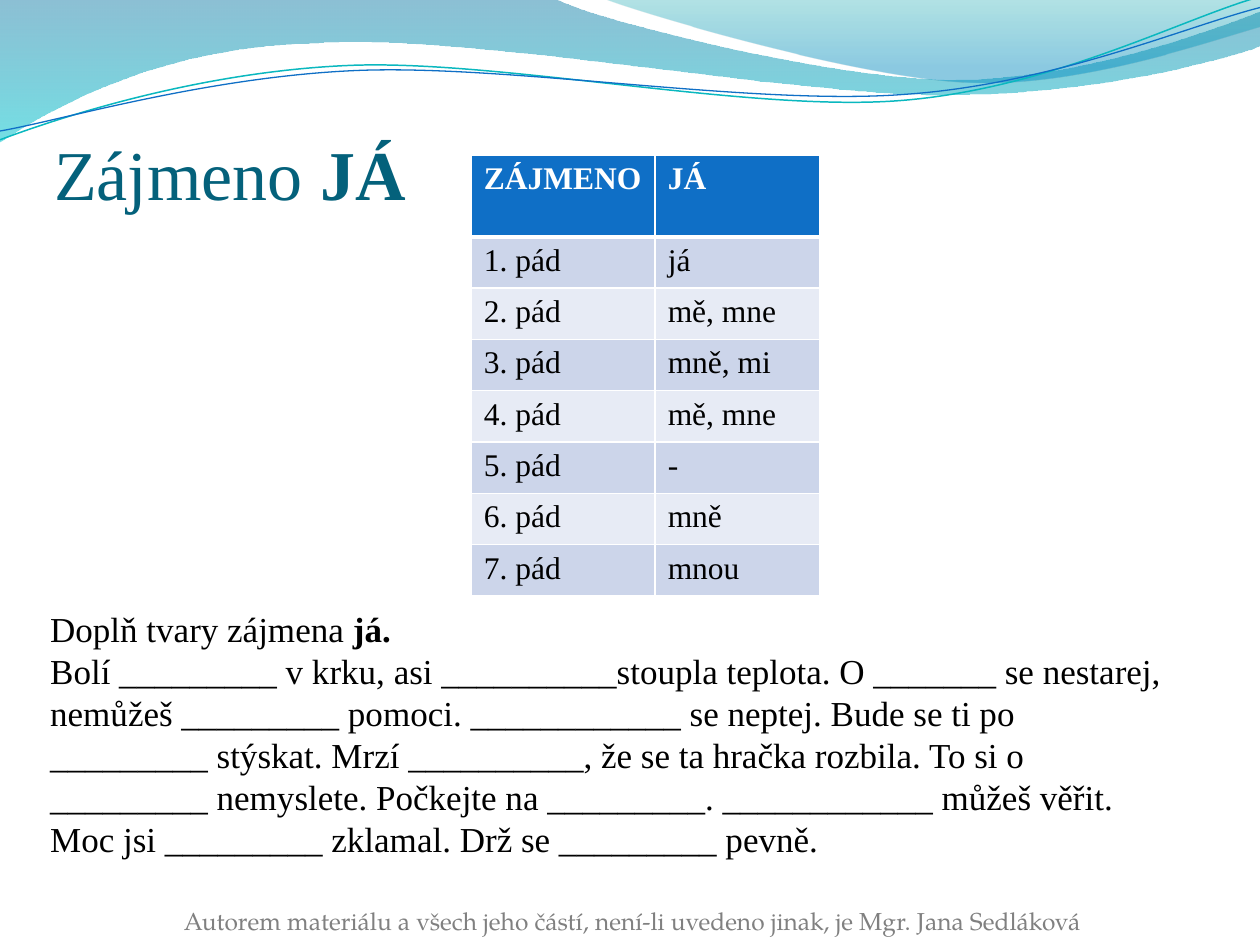
import pptx
import pptx.util
import pptx.dml.color
import pptx.enum.text
from pptx.oxml.ns import qn
from lxml import etree

Inches = pptx.util.Inches
Pt = pptx.util.Pt
ANCHOR = pptx.enum.text.MSO_ANCHOR

COLORS = {
    "title": "04617B", "text": "000000", "footer": "808080",
    "header": "0F6FC6", "header_text": "FFFFFF", "border": "FFFFFF",
    "odd_row": "CCD5EA", "even_row": "E7EBF5",
    "wave_top": "0074A1", "wave_bottom": "00C6CF",
    "crest_top": "00A1A9", "crest_bottom": "008BBF",
    "teal_line": "0AB8BF", "blue_line": "0F6FC6",
}
SERIF = "Times New Roman"

# Each outline is a start point, then points (2 numbers) or Bézier curves (6 numbers).
WAVE = [(0, 0), (4.4, -0.01), (4.76, 0.17, 6.64, 0.63, 7.58, 0.63),
        (8.53, 0.63, 9.58, 0.26, 10, 0.09), (10.01, 0.36),
        (9.83, 0.44, 8.7, 0.76, 7.46, 0.75), (6.22, 0.75, 3.82, 0.28, 2.57, 0.34),
        (1.29, 0.36, 0.46, 0.83, -0.01, 1.13)]
CREST = [(4.79, -0.01), (5.09, 0.11, 6.82, 0.62, 7.69, 0.65),
         (8.56, 0.69, 9.61, 0.32, 10, 0.21), (10, 0)]
TEAL_LINE = [(0, 1.11), (0.48, 0.93, 1.58, 0.57, 2.77, 0.52),
             (3.95, 0.47, 5.93, 0.89, 7.13, 0.8), (8.33, 0.71, 9.38, 0.15, 9.98, -0.02)]
BLUE_LINE = [(0, 1.04), (0.47, 0.96, 1.64, 0.61, 2.83, 0.56),
             (4.03, 0.51, 5.97, 0.84, 7.17, 0.75), (8.36, 0.67, 9.41, 0.21, 10, 0.06)]

PRONOUN_FORMS = ["já", "mě, mne", "mně, mi", "mě, mne", "-", "mně", "mnou"]
EXERCISE = (
    "Bolí _________ v krku, asi __________stoupla teplota. O _______ se nestarej, "
    "nemůžeš _________ pomoci. ____________ se neptej. Bude se ti po _________ stýskat. "
    "Mrzí __________, že se ta hračka rozbila. To si o _________ nemyslete. "
    "Počkejte na _________. ____________ můžeš věřit. Moc jsi _________ zklamal. "
    "Drž se _________ pevně.")


def rgb(name):
    return pptx.dml.color.RGBColor.from_string(COLORS[name])


def add_outline(slide, outline, close):
    """Add a freeform through the end points, then bend its curved segments."""
    ends = [tuple(map(Inches, part[-2:])) for part in outline]
    builder = slide.shapes.build_freeform(*ends[0])
    builder.add_line_segments(ends[1:], close=close)
    shape = builder.convert_to_shape()
    shape.shadow.inherit = False
    segments = list(shape.element.iter(qn("a:lnTo")))
    for segment, part in zip(segments, outline[1:]):
        if len(part) == 6:
            curve = etree.Element(qn("a:cubicBezTo"))
            for x, y in zip(part[::2], part[1::2]):
                etree.SubElement(curve, qn("a:pt"), x=str(Inches(x) - shape.left),
                                 y=str(Inches(y) - shape.top))
            segment.getparent().replace(segment, curve)
    return shape


def add_wave(slide, outline, stops):
    """Add a closed shape with a downward gradient of (position, colour, opacity) stops."""
    wave = add_outline(slide, outline, close=True)
    wave.line.fill.background()
    wave.fill.gradient()
    wave.fill.gradient_angle = 270
    for stop, (position, color, _) in zip(wave.fill.gradient_stops, stops):
        stop.position = position
        stop.color.rgb = rgb(color)
    for element, (_, _, opacity) in zip(wave.element.iter(qn("a:gs")), stops):
        etree.SubElement(element[0], qn("a:alpha"), val=str(opacity * 1000))


def add_curve(slide, outline, color, width):
    curve = add_outline(slide, outline, close=False)
    curve.fill.background()
    curve.line.color.rgb = rgb(color)
    curve.line.width = Pt(width)


def write(paragraph, text, size=18, color="text", font=SERIF, bold=False):
    run = paragraph.add_run()
    run.text = text
    run.font.size = Pt(size)
    run.font.name = font
    run.font.bold = bold
    run.font.color.rgb = rgb(color)


def add_text_frame(slide, box, anchor=ANCHOR.TOP, insets=(0.1, 0.05, 0.1, 0.05)):
    frame = slide.shapes.add_textbox(*map(Inches, box)).text_frame
    frame.word_wrap = True
    frame.vertical_anchor = anchor
    (frame.margin_left, frame.margin_top,
     frame.margin_right, frame.margin_bottom) = map(Inches, insets)
    return frame


def set_borders(cell, bottom_width):
    properties = cell._tc.get_or_add_tcPr()
    widths = {"a:lnL": 1, "a:lnR": 1, "a:lnT": 1, "a:lnB": bottom_width}
    for index, (side, width) in enumerate(widths.items()):
        border = etree.Element(qn(side), w=str(Pt(width)))
        fill = etree.SubElement(border, qn("a:solidFill"))
        etree.SubElement(fill, qn("a:srgbClr"), val=COLORS["border"])
        properties.insert(index, border)


def add_declension_table(slide):
    rows = [("ZÁJMENO", "JÁ")]
    rows += [(f"{number}. pád", form) for number, form in enumerate(PRONOUN_FORMS, 1)]
    height, header_height = 3.5, 0.65
    table = slide.shapes.add_table(len(rows), 2, Inches(3.74), Inches(1.23),
                                   Inches(2.77), Inches(height)).table
    for column, width in zip(table.columns, (1.46, 1.31)):
        column.width = Inches(width)
    for index, texts in enumerate(rows):
        is_header = index == 0
        table.rows[index].height = Inches(
            header_height if is_header else (height - header_height) / len(PRONOUN_FORMS))
        fill = "header" if is_header else "odd_row" if index % 2 else "even_row"
        for cell, text in zip(table.rows[index].cells, texts):
            cell.fill.solid()
            cell.fill.fore_color.rgb = rgb(fill)
            if is_header:
                set_borders(cell, bottom_width=3)
            write(cell.text_frame.paragraphs[0], text, bold=is_header,
                  color="header_text" if is_header else "text")


def main():
    presentation = pptx.Presentation()
    presentation.slide_width = Inches(10)
    presentation.slide_height = Inches(7.5)
    slide = presentation.slides.add_slide(presentation.slide_layouts[6])

    add_wave(slide, WAVE, [(0, "wave_top", 45), (1, "wave_bottom", 55)])
    add_wave(slide, CREST, [(0, "crest_top", 30), (0.8, "crest_bottom", 45)])
    add_curve(slide, TEAL_LINE, "teal_line", 0.85)
    add_curve(slide, BLUE_LINE, "blue_line", 0.75)

    title = add_text_frame(slide, (0.43, 0.92, 3.23, 0.78), ANCHOR.BOTTOM,
                           (0, 0.05, 0, 0)).paragraphs[0]
    write(title, "Zájmeno ", size=40, color="title")
    write(title, "JÁ", size=40, color="title", bold=True)

    add_declension_table(slide)

    exercise = add_text_frame(slide, (0.3, 4.77, 9.13, 2.12))
    write(exercise.paragraphs[0], "Doplň tvary zájmena ", size=20)
    write(exercise.paragraphs[0], "já.", size=20, bold=True)
    write(exercise.add_paragraph(), EXERCISE, size=20)

    footer = add_text_frame(slide, (1.46, 7.04, 8.41, 0.53), ANCHOR.MIDDLE,
                            (0, 0.05, 0.1, 0.05))
    write(footer.paragraphs[0],
          "Autorem materiálu a všech jeho částí, není-li uvedeno jinak, je Mgr. Jana Sedláková",
          size=14, color="footer", font="TeX Gyre Pagella")

    presentation.save("out.pptx")


if __name__ == "__main__":
    main()
